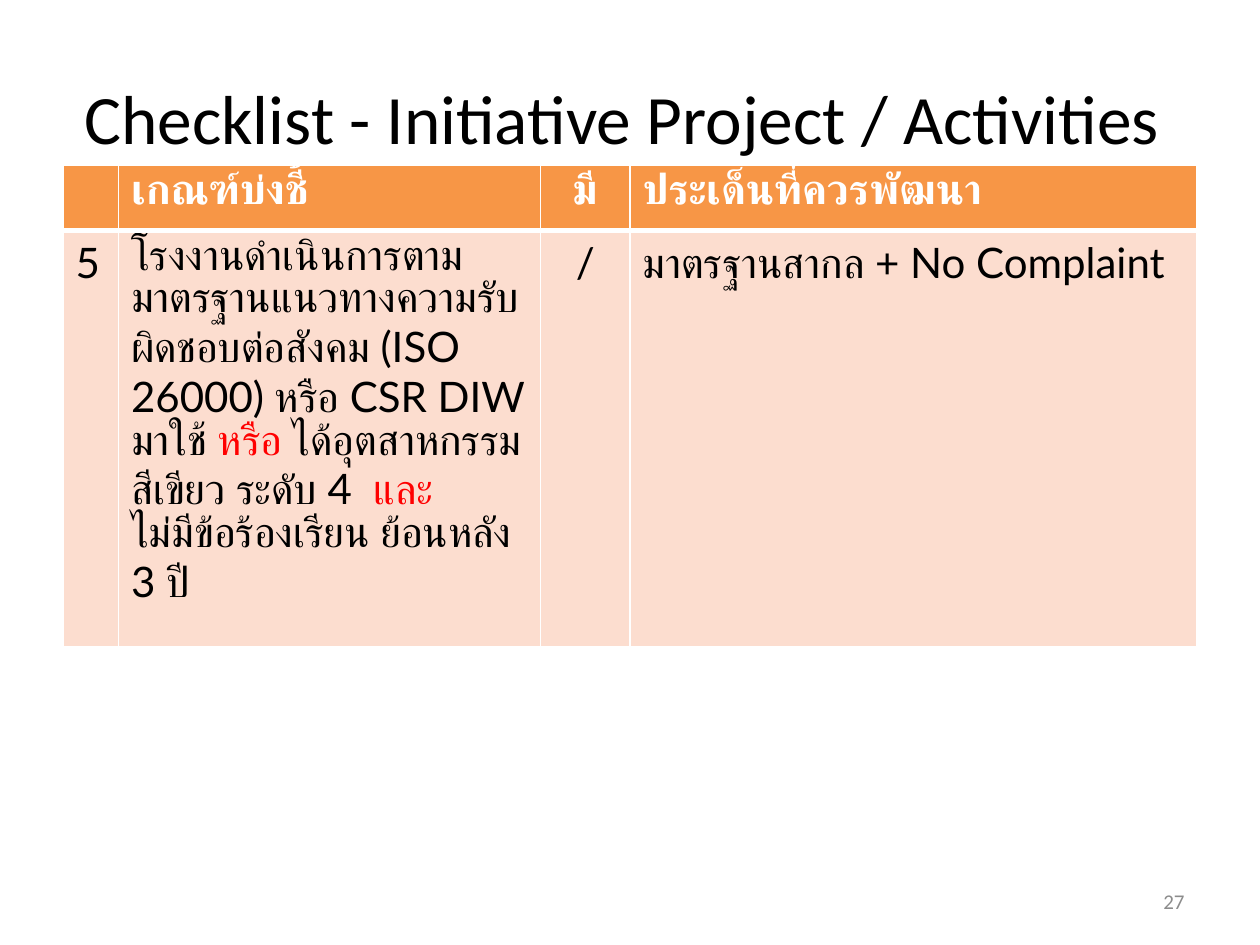
from dataclasses import dataclass, field

from lxml import etree
from pptx import Presentation
from pptx.dml.color import RGBColor
from pptx.enum import text as t
from pptx.oxml import ns
from pptx.util import Pt

COLORS = {
    "ink": "000000",
    "alert": "FF0000",
    "header": "F79646",
    "body": "FCDDCF",
    "white": "FFFFFF",
    "number": "8C8C8C",
}
LEFT, CENTER, RIGHT = t.PP_ALIGN.LEFT, t.PP_ALIGN.CENTER, t.PP_ALIGN.RIGHT


@dataclass
class SlideWriter:
    slide: object
    heading_font: str = "Calibri"
    table_font: str = "Lato"
    table_size: float = 24
    colors: dict = field(default_factory=lambda: COLORS)

    def rgb(self, name):
        return RGBColor.from_string(self.colors[name])

    def style(self, font, face, size, color, bold=False):
        font.name, font.size, font.bold = face, Pt(size), bold
        font.color.rgb = self.rgb(color)

    def label(self, words, box, size, color, align):
        frame = self.slide.shapes.add_textbox(*map(Pt, box)).text_frame
        frame.word_wrap = True
        frame.vertical_anchor = t.MSO_ANCHOR.MIDDLE
        frame.text = words
        line = frame.paragraphs[0]
        line.alignment = align
        self.style(line.runs[0].font, self.heading_font, size, color)

    def border(self, cell, sides):
        properties = cell._tc.get_or_add_tcPr()
        for position, (side, width) in enumerate(sides.items()):
            edge = etree.Element(ns.qn(f"a:ln{side}"), w=str(Pt(width)))
            fill = etree.SubElement(edge, ns.qn("a:solidFill"))
            etree.SubElement(fill, ns.qn("a:srgbClr"), val=self.colors["white"])
            properties.insert(position, edge)

    def cell(self, cell, paragraphs, fill, color, align, bold, sides):
        cell.fill.solid()
        cell.fill.fore_color.rgb = self.rgb(fill)
        self.border(cell, sides)
        frame = cell.text_frame
        for index, pieces in enumerate(paragraphs):
            line = frame.add_paragraph() if index else frame.paragraphs[0]
            line.alignment = align
            for words, accent in pieces:
                run = line.add_run()
                run.text = words
                self.style(run.font, self.table_font, self.table_size, accent or color, bold)

    def table(self, rows, box, widths, heights, aligns):
        grid = self.slide.shapes.add_table(len(rows), len(widths), *map(Pt, box)).table
        grid.first_row = True
        grid.horz_banding = False
        for column, width in zip(grid.columns, widths):
            column.width = Pt(width)
        for row, height in zip(grid.rows, heights):
            row.height = Pt(height)
        for r, row in enumerate(rows):
            header = r == 0
            fill, color = ("header", "white") if header else ("body", "ink")
            sides = {"L": 1, "R": 1, "T": 1 if header else 3, "B": 3 if header else 1}
            for c, paragraphs in enumerate(row):
                self.cell(grid.cell(r, c), paragraphs, fill, color, aligns[c], header, sides)


def plain(words):
    return [[(words, None)]]


def main():
    deck = Presentation()
    deck.slide_width, deck.slide_height = Pt(720), Pt(540)
    writer = SlideWriter(deck.slides.add_slide(deck.slide_layouts[6]))

    writer.label("Checklist - Initiative Project / Activities ", (36, 21.6, 648, 90), 39.6, "ink", CENTER)

    criterion = [
        [
            ("โรงงานดำเนินการตามมาตรฐานแนวทางความรับผิดชอบต่อสังคม (ISO 26000) หรือ CSR DIW มาใช้ ", None),
            ("หรือ", "alert"),
            (" ได้อุตสาหกรรมสีเขียว ระดับ 4  ", None),
            ("และ", "alert"),
        ],
        [("ไม่มีข้อร้องเรียน ย้อนหลัง 3 ปี", None)],
    ]
    checklist = [
        [plain(""), plain("เกณฑ์บ่งชี้"), plain("มี"), plain("ประเด็นที่ควรพัฒนา")],
        [plain("5"), criterion, plain("/"), plain("มาตรฐานสากล + No Complaint")],
    ]
    writer.table(
        checklist,
        box=(36, 94.3, 648, 217.4),
        widths=(31.7, 241.2, 51.1, 324),
        heights=(37.4, 180),
        aligns=(LEFT, LEFT, CENTER, LEFT),
    )

    writer.label("27", (516, 500.5, 168, 28.75), 12, "number", RIGHT)
    deck.save("out.pptx")


if __name__ == "__main__":
    main()
